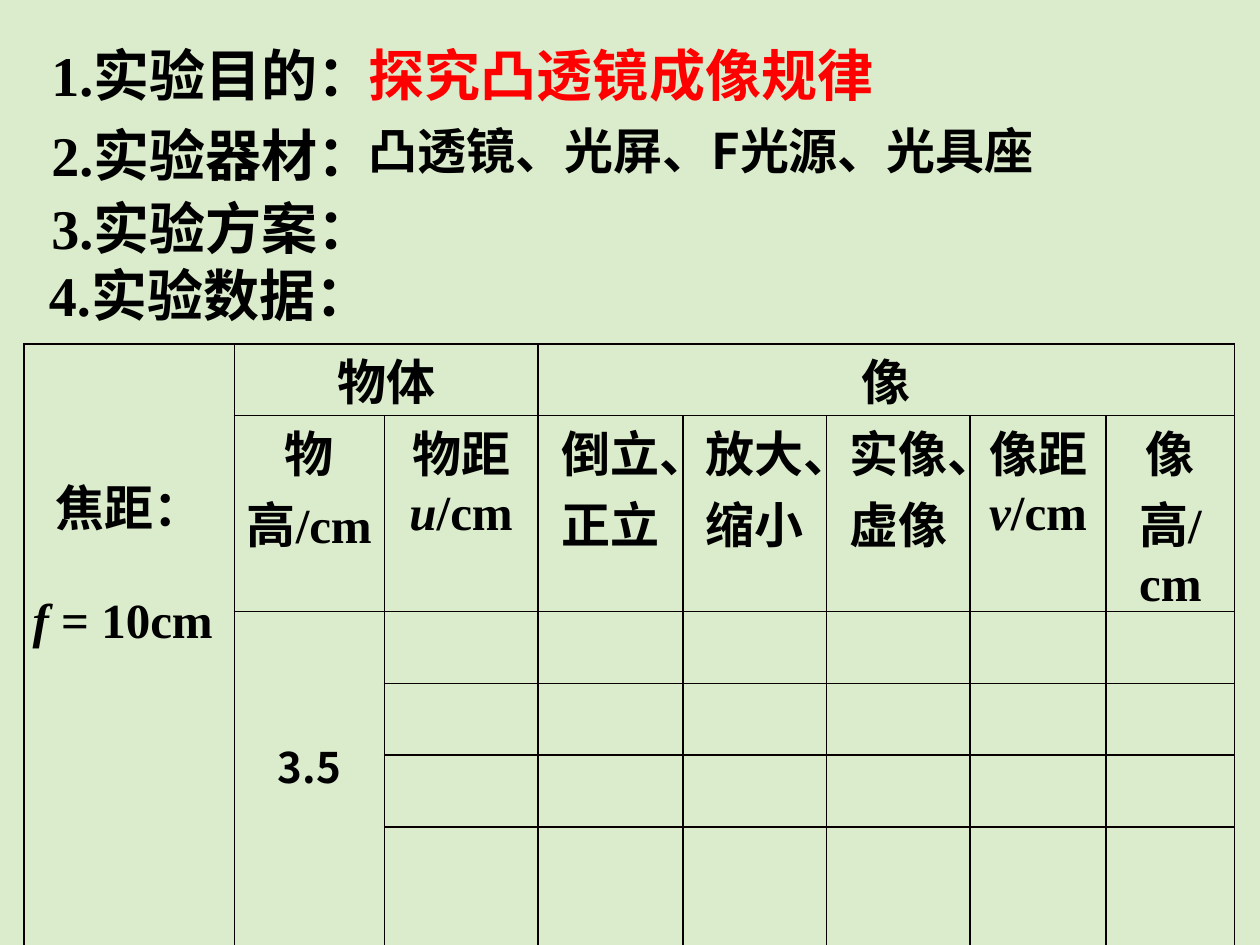
import pptx
import pptx.dml.color
import pptx.enum.text
import pptx.oxml
import pptx.oxml.ns
import pptx.util

Inches = pptx.util.Inches
Pt = pptx.util.Pt
ALIGN = pptx.enum.text.PP_ALIGN
SERIF, SANS = "Times New Roman", "Noto Sans CJK SC"
BLACK, RED, GREEN, RULE = "000000", "FF0000", "DBECCC", "080000"


def colour(value):
    """Turn a hex string into a colour."""
    return pptx.dml.color.RGBColor.from_string(value)


def write(paragraph, text, font=SERIF, size=28, fill=BLACK, italic=False):
    """Add one bold run of text to a paragraph."""
    run = paragraph.add_run()
    run.text = text
    run.font.name = font
    run.font.size = Pt(size)
    run.font.bold = True
    run.font.italic = italic
    run.font.color.rgb = colour(fill)
    east_asian = pptx.oxml.parse_xml(
        f'<a:ea {pptx.oxml.ns.nsdecls("a")} typeface="{SANS}"/>')
    run.font._element.find(pptx.oxml.ns.qn("a:latin")).addnext(east_asian)


class Worksheet:
    """Holds the style and the current slide."""

    def __init__(self, presentation):
        """Add a blank slide with the page colour."""
        self.slide = presentation.slides.add_slide(presentation.slide_layouts[6])
        self.slide.background.fill.solid()
        self.slide.background.fill.fore_color.rgb = colour(GREEN)

    def line(self, left, top, width, height, *runs, **style):
        """Add a one-line text box made of the given (text, font) runs."""
        box = self.slide.shapes.add_textbox(
            Inches(left), Inches(top), Inches(width), Inches(height))
        box.text_frame.word_wrap = True
        box.text_frame.auto_size = pptx.enum.text.MSO_AUTO_SIZE.SHAPE_TO_FIT_TEXT
        for text, font in runs:
            write(box.text_frame.paragraphs[0], text, font=font, **style)

    def grid(self, left, top, widths, heights):
        """Add an unfilled table with thin rules and return it."""
        table = self.slide.shapes.add_table(
            len(heights), len(widths), Inches(left), Inches(top),
            Inches(sum(widths)), Inches(sum(heights))).table
        table.first_row = table.horz_banding = False
        for column, width in zip(table.columns, widths):
            column.width = Inches(width)
        for row, height in zip(table.rows, heights):
            row.height = Inches(height)
        for cell in table.iter_cells():
            cell.margin_left = cell.margin_right = Inches(0.07)
            cell.margin_top = cell.margin_bottom = 0
            self.rule(cell)
            cell.fill.background()
        return table

    def rule(self, cell):
        """Draw the four borders of a cell."""
        properties = cell._tc.get_or_add_tcPr()
        for side in ("lnL", "lnR", "lnT", "lnB"):
            properties.append(pptx.oxml.parse_xml(
                f'<a:{side} {pptx.oxml.ns.nsdecls("a")} w="{Pt(1)}"><a:solidFill>'
                f'<a:srgbClr val="{RULE}"/></a:solidFill></a:{side}>'))

    def entry(self, cell, *texts, top=0, **style):
        """Write a centred entry; single letters are italic symbols."""
        cell.margin_top = Inches(top)
        paragraph = cell.text_frame.paragraphs[0]
        paragraph.alignment = ALIGN.CENTER
        for text in texts:
            write(paragraph, text, italic=text in ("f", "u", "v"), **style)


def main():
    """Build the lens experiment slide."""
    presentation = pptx.Presentation()
    presentation.slide_width, presentation.slide_height = Inches(10), Inches(7.5)
    sheet = Worksheet(presentation)

    records = sheet.grid(0.19, 2.73, [1.67, 1.19, 1.22, 1.15, 1.14, 1.14, 1.08, 1.02],
                         [0.57, 1.14, 0.57, 0.57, 0.57, 0.57])
    for first, last in (((0, 0), (5, 0)), ((0, 1), (0, 2)),
                        ((0, 3), (0, 7)), ((2, 1), (5, 1))):
        records.cell(*first).merge(records.cell(*last))

    focal = records.cell(0, 0)
    sheet.entry(focal, "焦距：", top=1)
    focal_value = focal.text_frame.add_paragraph()
    focal_value.space_before = Pt(31)
    write(focal_value, "f", italic=True)
    write(focal_value, " = 10cm")

    sheet.entry(records.cell(0, 1), "物体")
    sheet.entry(records.cell(0, 3), "像")
    headings = [("物高/cm",), ("物距", "u", "/cm"), ("倒立、正立",), ("放大、缩小",),
                ("实像、虚像",), ("像距", "v", "/cm"), ("像高/cm",)]
    for column, heading in enumerate(headings, start=1):
        sheet.entry(records.cell(1, column), *heading)
    sheet.entry(records.cell(2, 1), "3.5", top=0.98, font=SANS, size=24)

    steps = [("实验目的：", 0.31, 0.27, 2.67), ("实验器材：", 0.31, 0.91, 2.77),
             ("实验方案：", 0.31, 1.49, 2.77), ("实验数据：", 0.29, 2.02, 2.95)]
    for number, (step, left, top, width) in enumerate(steps, start=1):
        sheet.line(left, top, width, 0.64, (f"{number}.", SERIF), (step, SANS), size=32)
    sheet.line(2.83, 0.91, 5.96, 0.57, ("凸透镜、光屏、F光源、光具座", SANS))
    sheet.line(2.83, 0.27, 4.66, 0.64, ("探究凸透镜成像规律", SANS), size=32, fill=RED)

    presentation.save("out.pptx")


if __name__ == "__main__":
    main()
